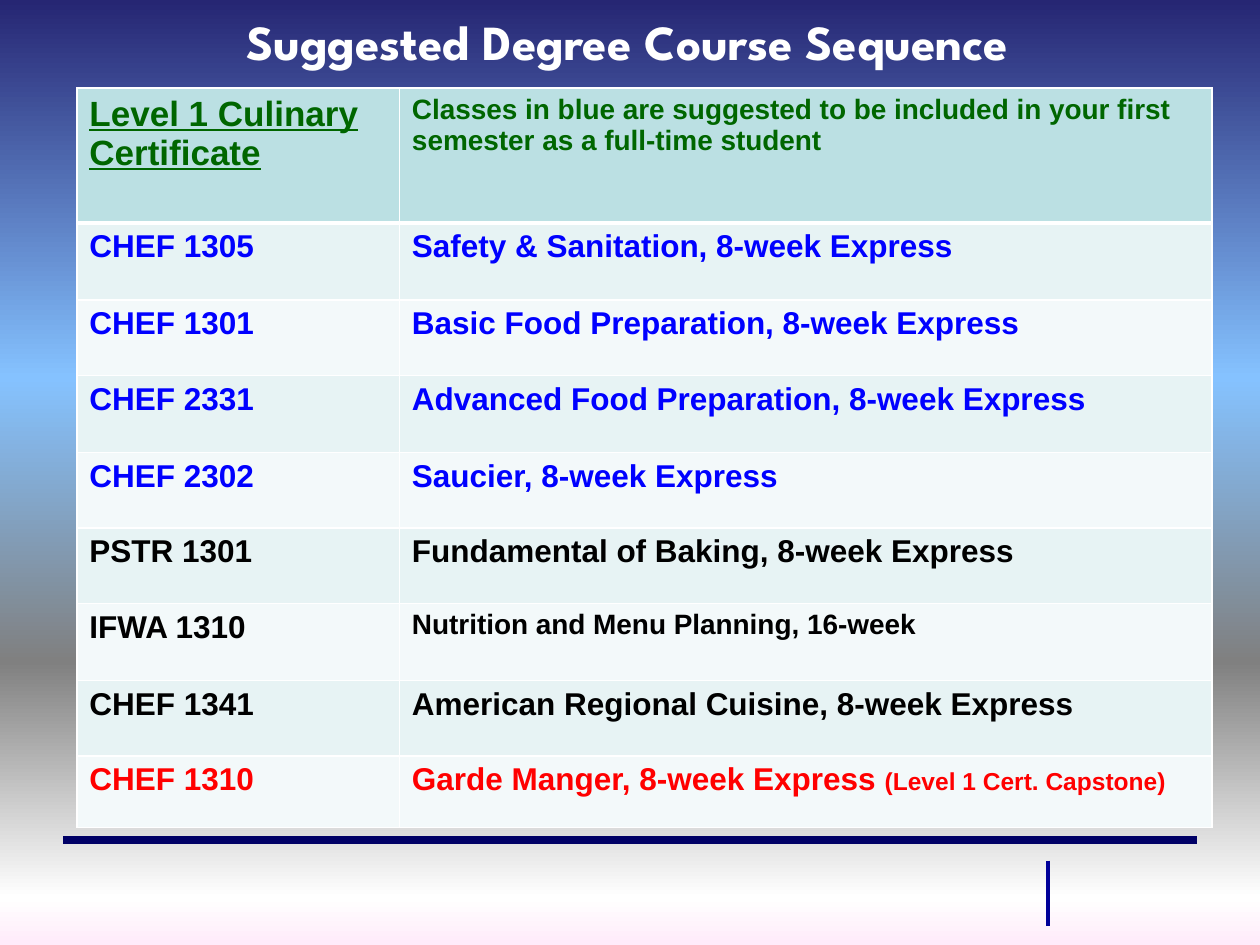
from dataclasses import dataclass

from lxml import etree
from pptx import Presentation
from pptx import util as u
from pptx.dml.color import RGBColor
from pptx.enum import shapes, text
from pptx.oxml.ns import qn

COLORS = {
    "white": "FFFFFF", "navy": "000066", "tick": "000099", "green": "006600",
    "blue": "0000FF", "black": "000000", "red": "FF0000",
    "header": "BBE0E3", "odd": "E7F3F4", "even": "F3F9FA",
}
# Position in percent and colour of each background stop
BACKGROUND = [(0, "262673"), (40, "85C2FF"), (70, "808080"), (95, "FFFFFF"), (100, "FFEBFA")]


@dataclass
class Run:
    text: str
    size: float = 18
    underline: bool = False


@dataclass
class Row:
    height: float
    color: str
    code: Run
    course: list[Run]


@dataclass
class Rule:
    start: tuple[float, float]
    end: tuple[float, float]
    color: str
    width: float


ROWS = [
    Row(1.07, "green", Run("Level 1 Culinary Certificate", 20, True),
        [Run("Classes in blue are suggested to be included in your first "
             "semester as a full-time student", 16)]),
    Row(0.61, "blue", Run("CHEF 1305"), [Run("Safety & Sanitation, 8-week Express")]),
    Row(0.6, "blue", Run("CHEF 1301"), [Run("Basic Food Preparation, 8-week Express")]),
    Row(0.61, "blue", Run("CHEF 2331"), [Run("Advanced Food Preparation, 8-week Express")]),
    Row(0.6, "blue", Run("CHEF 2302"), [Run("Saucier, 8-week Express")]),
    Row(0.6, "black", Run("PSTR 1301"), [Run("Fundamental of Baking, 8-week Express")]),
    Row(0.61, "black", Run("IFWA 1310"), [Run("Nutrition and Menu Planning, 16-week", 16)]),
    Row(0.6, "black", Run("CHEF 1341"), [Run("American Regional Cuisine, 8-week Express")]),
    Row(0.57, "red", Run("CHEF 1310"),
        [Run("Garde Manger, 8-week Express "), Run("(Level 1 Cert. Capstone)", 14)]),
]
COLUMNS = [2.56, 6.45]
RULES = [
    Rule((0.5, 6.67), (9.5, 6.67), "navy", 4.5),
    Rule((8.32, 6.83), (8.32, 7.35), "tick", 2.25),
]


def rgb(name: str) -> RGBColor:
    return RGBColor.from_string(COLORS[name])


def paint_background(s) -> None:
    s.background.fill.gradient()
    grad = s.element.find(".//" + qn("a:gradFill"))
    stops = grad.find(qn("a:gsLst"))
    for stop in list(stops):
        stops.remove(stop)
    for percent, color in BACKGROUND:
        stop = etree.SubElement(stops, qn("a:gs"), pos=str(percent * 1000))
        etree.SubElement(stop, qn("a:srgbClr"), val=color)
    grad.find(qn("a:lin")).set("ang", str(90 * 60000))


def add_run(p, run: Run, color: str, font: str = "Arial") -> None:
    r = p.add_run()
    r.text = run.text
    r.font.name = font
    r.font.size = u.Pt(run.size)
    r.font.bold = True
    r.font.underline = run.underline
    r.font.color.rgb = rgb(color)


def add_rule(s, rule: Rule) -> None:
    sp = s.shapes.add_connector(shapes.MSO_CONNECTOR.STRAIGHT,
                                *(u.Inches(v) for v in rule.start + rule.end))
    sp.line.color.rgb = rgb(rule.color)
    sp.line.width = u.Pt(rule.width)
    etree.SubElement(sp.element.spPr, qn("a:effectLst"))


def add_title(s, run: Run) -> None:
    sp = s.shapes.add_textbox(u.Inches(0.45), u.Inches(0.09), u.Inches(9.05), u.Inches(0.47))
    tf = sp.text_frame
    tf.word_wrap = True
    tf.vertical_anchor = text.MSO_ANCHOR.MIDDLE
    p = tf.paragraphs[0]
    p.alignment = text.PP_ALIGN.CENTER
    add_run(p, run, "white", "League Spartan")


def set_borders(cell, top: float, bottom: float) -> None:
    tc_pr = cell._tc.get_or_add_tcPr()
    for i, (side, width) in enumerate({"L": 1, "R": 1, "T": top, "B": bottom}.items()):
        ln = etree.Element(qn(f"a:ln{side}"), w=str(u.Pt(width)))
        fill = etree.SubElement(ln, qn("a:solidFill"))
        etree.SubElement(fill, qn("a:srgbClr"), val=COLORS["white"])
        tc_pr.insert(i, ln)


def add_course_table(s, rows: list[Row]) -> None:
    height = sum(row.height for row in rows)
    table = s.shapes.add_table(len(rows), len(COLUMNS), u.Inches(0.61), u.Inches(0.7),
                               u.Inches(sum(COLUMNS)), u.Inches(height)).table
    for column, width in zip(table.columns, COLUMNS):
        column.width = u.Inches(width)
    for i, row in enumerate(rows):
        table.rows[i].height = u.Inches(row.height)
        band = "header" if i == 0 else "odd" if i % 2 else "even"
        for j, runs in enumerate([[row.code], row.course]):
            cell = table.cell(i, j)
            cell.fill.solid()
            cell.fill.fore_color.rgb = rgb(band)
            # A heavier line separates the header from the courses
            set_borders(cell, 3 if i == 1 else 1, 3 if i == 0 else 1)
            for run in runs:
                add_run(cell.text_frame.paragraphs[0], run, row.color)


def main() -> None:
    prs = Presentation()
    prs.slide_width, prs.slide_height = u.Inches(10), u.Inches(7.5)
    s = prs.slides.add_slide(prs.slide_layouts[6])

    # Background and footer rules
    paint_background(s)
    for rule in RULES:
        add_rule(s, rule)

    # Title and course sequence
    add_title(s, Run("Suggested Degree Course Sequence", 28))
    add_course_table(s, ROWS)
    prs.save("out.pptx")


if __name__ == "__main__":
    main()
